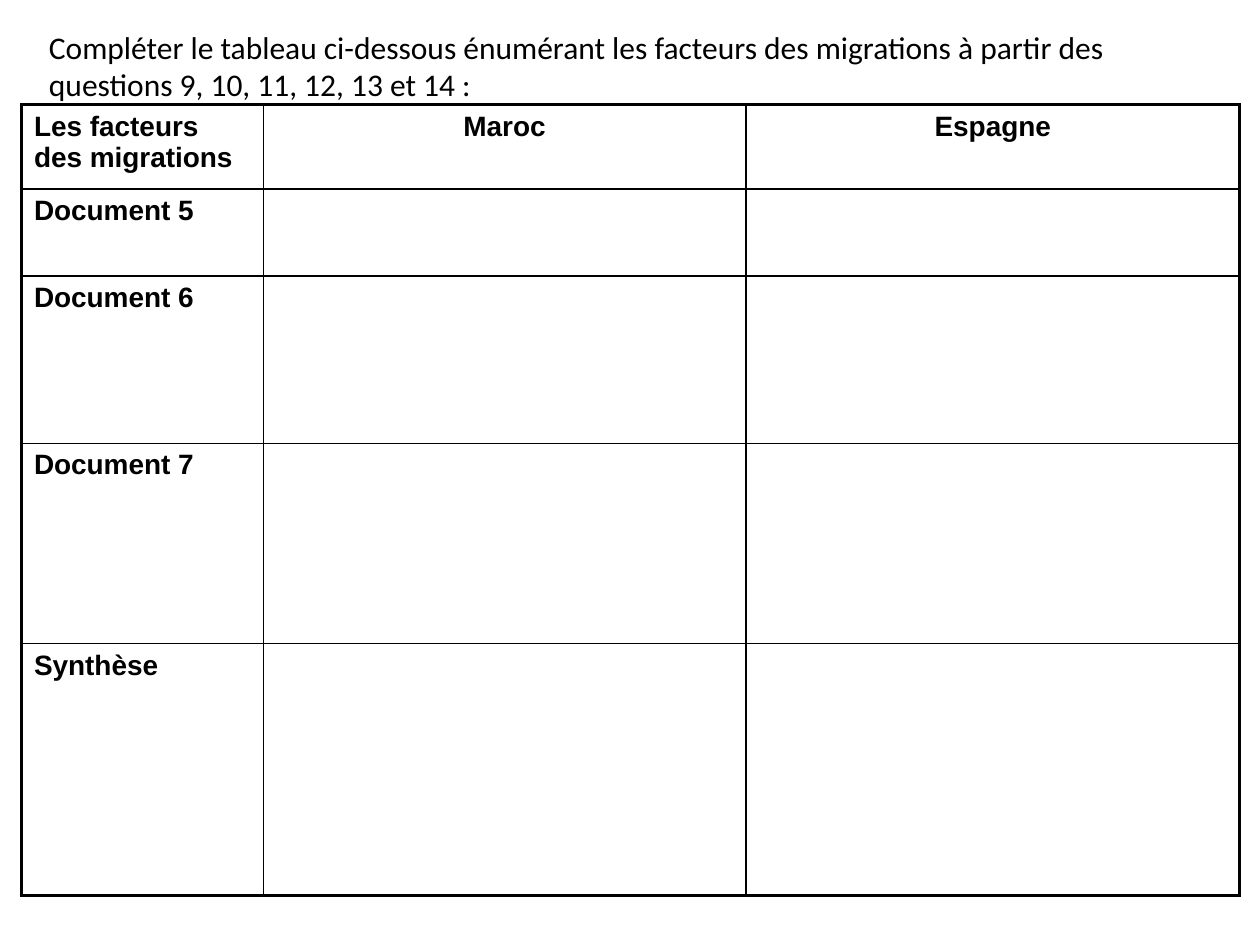
import dataclasses
from typing import Any

import lxml.etree
import pptx
import pptx.dml.color
import pptx.enum.text
import pptx.oxml.ns
import pptx.util

Inches = pptx.util.Inches
Pt = pptx.util.Pt
ALIGN = pptx.enum.text.PP_ALIGN

COLORS = {"ink": "000000"}
TITLE_FONT = {"name": "Calibri", "size": Pt(18), "bold": False}
CELL_FONT = {"name": "Arial", "size": Pt(16), "bold": True}
OUTER, INNER = 2.25, 1

COLUMN_WIDTHS = [1.92, 3.83, 3.92]
ROW_HEIGHTS = [0.67, 0.69, 1.33, 1.59, 2]


@dataclasses.dataclass
class Label:
    row: int
    col: int
    text: str
    align: Any = ALIGN.LEFT


COUNTRIES = ["Maroc", "Espagne"]
FACTORS = ["Les facteurs des migrations", "Document 5", "Document 6", "Document 7", "Synthèse"]
LABELS = [Label(row, 0, text) for row, text in enumerate(FACTORS)]
LABELS += [Label(0, col, text, ALIGN.CENTER) for col, text in enumerate(COUNTRIES, 1)]


def write(tf: Any, text: str, font: dict, align: Any = ALIGN.LEFT) -> None:
    p = tf.paragraphs[0]
    p.alignment = align
    r = p.add_run()
    r.text = text
    for name, value in font.items():
        setattr(r.font, name, value)
    r.font.color.rgb = pptx.dml.color.RGBColor.from_string(COLORS["ink"])


def add_border(cell: Any, side: str, width: float) -> None:
    qn = pptx.oxml.ns.qn
    tcPr = cell._tc.get_or_add_tcPr()
    ln = lxml.etree.SubElement(tcPr, qn(f"a:ln{side}"), w=str(Pt(width)))
    fill = lxml.etree.SubElement(ln, qn("a:solidFill"))
    lxml.etree.SubElement(fill, qn("a:srgbClr"), val=COLORS["ink"])


def add_instruction(slide: Any) -> None:
    sp = slide.shapes.add_textbox(Inches(0.29), Inches(0.17), Inches(9.42), Inches(0.7))
    tf = sp.text_frame
    tf.word_wrap = True
    write(tf, "Compléter le tableau ci-dessous énumérant les facteurs des migrations "
              "à partir des questions 9, 10, 11, 12, 13 et 14 :", TITLE_FONT)


def add_factor_table(slide: Any) -> None:
    rows, cols = len(ROW_HEIGHTS), len(COLUMN_WIDTHS)
    table = slide.shapes.add_table(
        rows, cols, Inches(0.17), Inches(0.83),
        Inches(sum(COLUMN_WIDTHS)), Inches(sum(ROW_HEIGHTS))).table
    table.first_row = table.horz_banding = False
    for column, width in zip(table.columns, COLUMN_WIDTHS):
        column.width = Inches(width)
    for row, height in zip(table.rows, ROW_HEIGHTS):
        row.height = Inches(height)

    # Thick frame, thin inner rules, no fill
    for i in range(rows):
        for j in range(cols):
            cell = table.cell(i, j)
            on_edge = {"L": j == 0, "R": j == cols - 1, "T": i == 0, "B": i == rows - 1}
            for side, outer in on_edge.items():
                add_border(cell, side, OUTER if outer else INNER)
            cell.fill.background()

    for label in LABELS:
        write(table.cell(label.row, label.col).text_frame, label.text, CELL_FONT, label.align)


def main() -> None:
    prs = pptx.Presentation()
    prs.slide_width, prs.slide_height = Inches(10), Inches(7.5)
    slide = prs.slides.add_slide(prs.slide_layouts[6])
    add_instruction(slide)
    add_factor_table(slide)
    prs.save("out.pptx")


if __name__ == "__main__":
    main()
